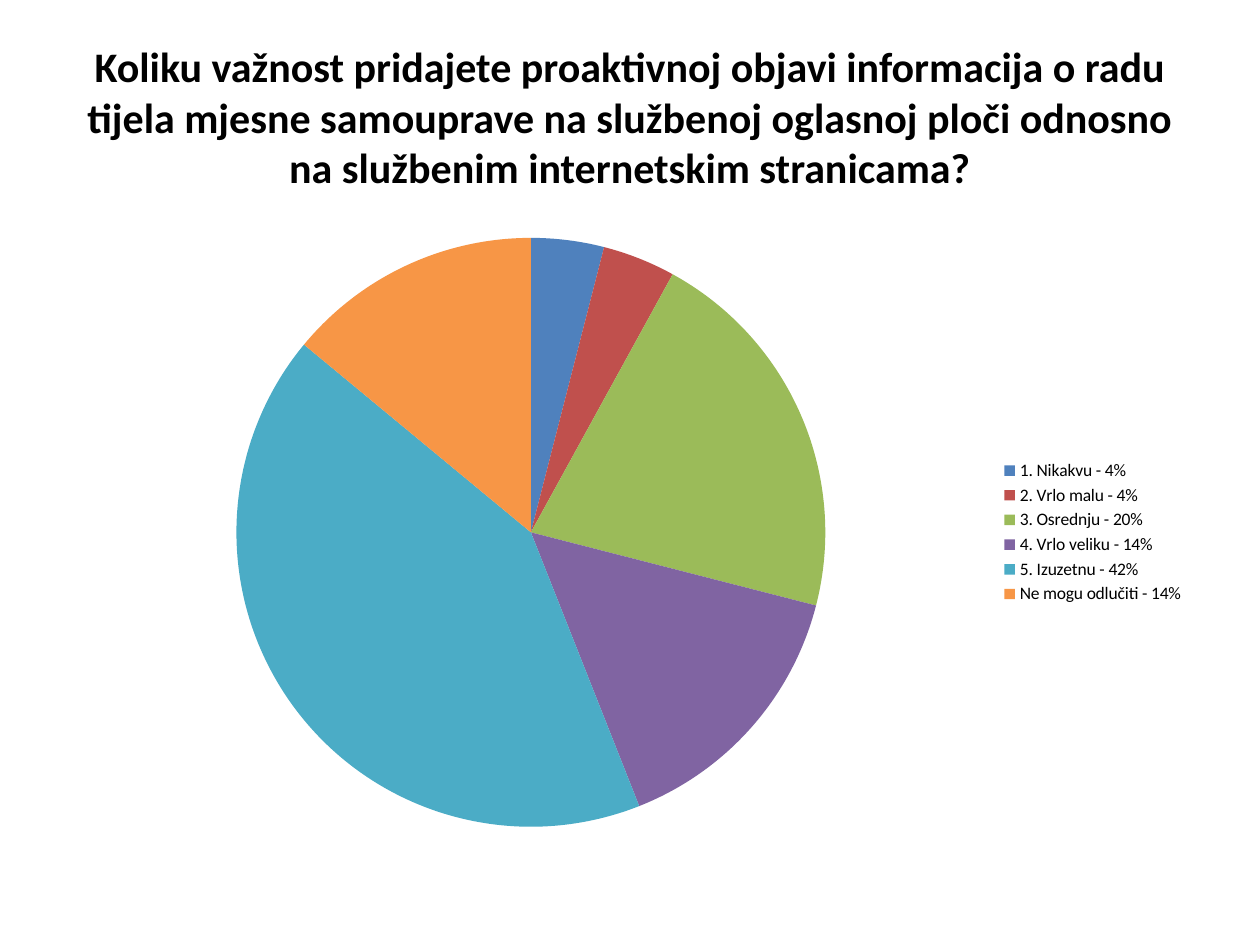
from pptx import Presentation
from pptx.chart.data import CategoryChartData
from pptx.dml.color import RGBColor
from pptx.enum import chart as charts, text
from pptx.util import Pt

QUESTION = (
    "Koliku važnost pridajete proaktivnoj objavi informacija o radu "
    "tijela mjesne samouprave na službenoj oglasnoj ploči odnosno "
    "na službenim internetskim stranicama?"
)
ANSWERS = [  # label, value, colour
    ("1. Nikakvu - 4%", 4, "4F81BD"),
    ("2. Vrlo malu - 4%", 4, "C0504D"),
    ("3. Osrednju - 20%", 21, "9BBB59"),
    ("4. Vrlo veliku - 14%", 15, "8064A2"),
    ("5. Izuzetnu - 42%", 42, "4BACC6"),
    ("Ne mogu odlučiti - 14%", 14, "F79646"),
]
PAGE_WIDTH, PAGE_HEIGHT = 720, 540
MARGIN = 36
CONTENT_WIDTH = PAGE_WIDTH - 2 * MARGIN


def set_font(font, size, bold=False):
    font.name = "Calibri"
    font.size = Pt(size)
    font.bold = bold
    font.color.rgb = RGBColor.from_string("000000")


def add_question(page):
    title = page.shapes.title
    title.left, title.top = Pt(MARGIN), Pt(21.6)
    title.width, title.height = Pt(CONTENT_WIDTH), Pt(90)
    frame = title.text_frame
    frame.text = QUESTION
    frame.word_wrap = True
    frame.auto_size = text.MSO_AUTO_SIZE.NONE
    frame.vertical_anchor = text.MSO_ANCHOR.MIDDLE
    para = frame.paragraphs[0]
    para.alignment = text.PP_ALIGN.CENTER
    set_font(para.font, 24, bold=True)


def add_answers(page):
    labels, values, colours = zip(*ANSWERS)
    data = CategoryChartData()
    data.categories = labels
    data.add_series("Series 1", values)
    chart = page.shapes.add_chart(
        charts.XL_CHART_TYPE.PIE,
        Pt(MARGIN), Pt(126), Pt(CONTENT_WIDTH), Pt(356.4), data,
    ).chart
    set_font(chart.font, 10)
    chart.has_title = False
    chart.has_legend = True
    chart.legend.position = charts.XL_LEGEND_POSITION.RIGHT
    chart.legend.include_in_layout = False
    plot = chart.plots[0]
    plot.vary_by_categories = True
    for index, colour in enumerate(colours):
        fill = plot.series[0].points[index].format.fill
        fill.solid()
        fill.fore_color.rgb = RGBColor.from_string(colour)


deck = Presentation()
deck.slide_width, deck.slide_height = Pt(PAGE_WIDTH), Pt(PAGE_HEIGHT)
page = deck.slides.add_slide(deck.slide_layouts[5])
add_question(page)
add_answers(page)
deck.save("out.pptx")
